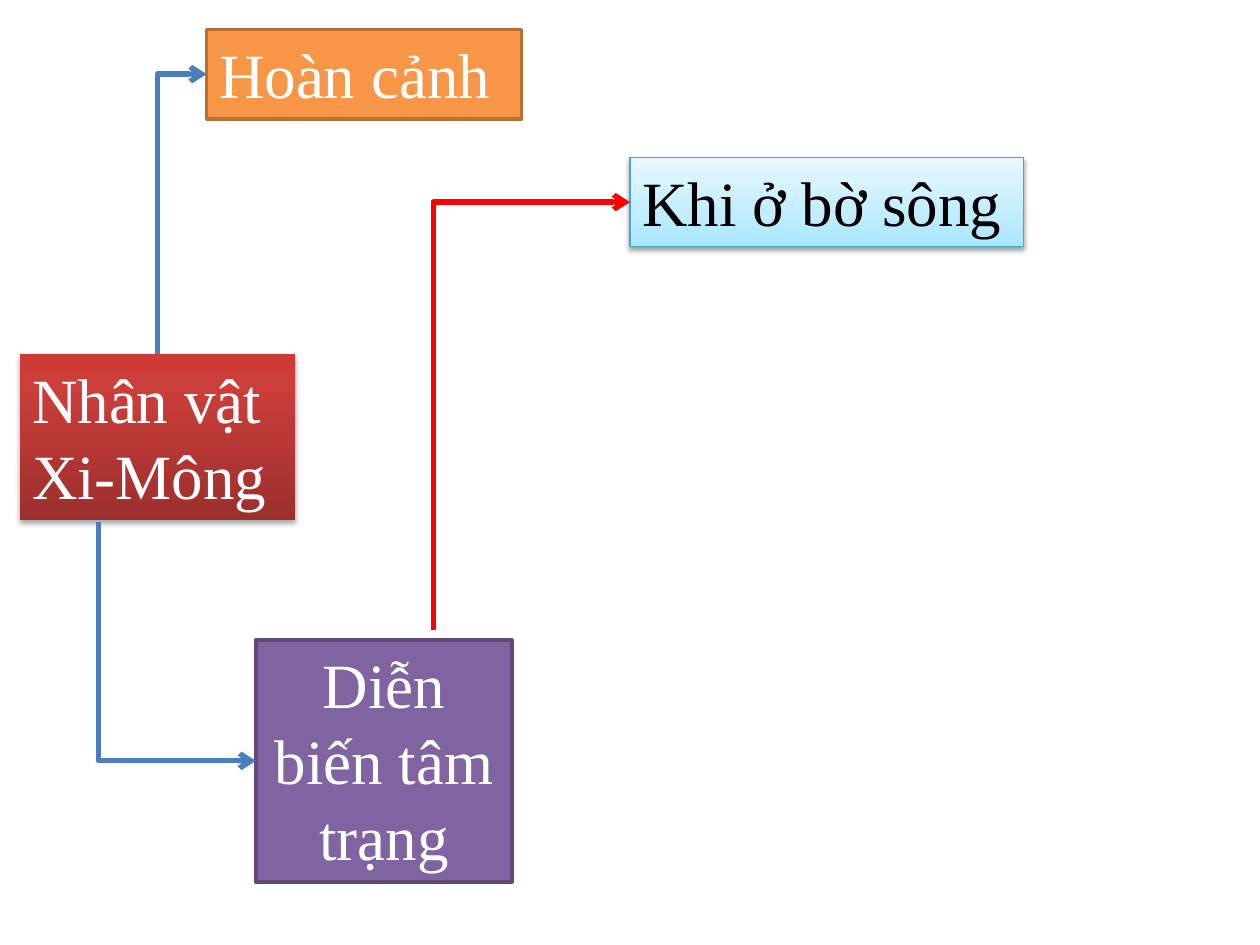
"""Builds a mind map of the character Xi-Mông from four boxes and three elbow arrows."""
from lxml import etree
from pptx import Presentation
from pptx import util as u
from pptx.dml.color import RGBColor
from pptx.enum import shapes, text
from pptx.oxml import parse_xml
from pptx.oxml.ns import nsdecls, qn

COLORS = {
    "white": "FFFFFF", "black": "000000", "orange": "F79646", "brown": "B76F34",
    "purple": "8064A2", "plum": "5F4A78", "teal": "46AAC5", "blue": "4B7EBC", "red": "FF0000",
    "crimson fade": [(0, "9C2F2D"), (80, "CB3E3A"), (100, "CE3B37")],
    "sky fade": [(0, "A7E6FF"), (35, "C1EDFF"), (100, "E7F8FF")],
}

presentation = Presentation()
presentation.slide_width, presentation.slide_height = u.Inches(10), u.Inches(7.5)
CELL = presentation.slide_width / 64
slide = presentation.slides.add_slide(presentation.slide_layouts[6])


def cells(*counts):
    return [u.Emu(round(count * CELL)) for count in counts]


def add_gradient(shape, stops):
    stop_xml = "".join(
        f'<a:gs pos="{place * 1000}"><a:srgbClr val="{color}"/></a:gs>' for place, color in stops)
    gradient = parse_xml(
        f'<a:gradFill {nsdecls("a")} rotWithShape="1"><a:gsLst>{stop_xml}</a:gsLst>'
        '<a:lin ang="16200000" scaled="0"/></a:gradFill>')
    shape._element.spPr.find(qn("a:prstGeom")).addnext(gradient)


left, center = text.PP_ALIGN.LEFT, text.PP_ALIGN.CENTER
boxes = [
    (["Nhân vật", "Xi-Mông"], (1, 18, 14, 8.4), "crimson fade", None, 0, "white", left, (35, 1.8)),
    (["Hoàn cảnh"], (10.5, 1.5, 16, 4.54), "orange", "brown", 2, "white", left, None),
    (["Diễn biến tâm trạng"], (13, 32.5, 13, 12.3), "purple", "plum", 2, "white", center, None),
    (["Khi ở bờ sông"], (32, 8, 20, 4.54), "sky fade", "teal", 0.75, "black", left, (38, 1.6)),
]
for lines, place, fill, outline, weight, ink, alignment, shadow in boxes:
    shape = slide.shapes.add_shape(shapes.MSO_SHAPE.RECTANGLE, *cells(*place))
    shape.shadow.inherit = False
    if isinstance(COLORS[fill], list):
        add_gradient(shape, COLORS[fill])
    else:
        shape.fill.solid()
        shape.fill.fore_color.rgb = RGBColor.from_string(COLORS[fill])
    if outline:
        shape.line.color.rgb = RGBColor.from_string(COLORS[outline])
        shape.line.width = u.Pt(weight)
    else:
        shape.line.fill.background()
    if shadow:
        opacity, distance = shadow
        shape._element.spPr.find(qn("a:effectLst")).append(parse_xml(
            f'<a:outerShdw {nsdecls("a")} blurRad="{u.Pt(3.1)}" dist="{u.Pt(distance)}" '
            f'dir="5400000" rotWithShape="0"><a:srgbClr val="{COLORS["black"]}">'
            f'<a:alpha val="{opacity * 1000}"/></a:srgbClr></a:outerShdw>'))
    frame = shape.text_frame
    frame.word_wrap = True
    frame.auto_size = text.MSO_AUTO_SIZE.SHAPE_TO_FIT_TEXT
    frame.vertical_anchor = text.MSO_ANCHOR.TOP
    frame.text = "\n".join(lines)
    for paragraph in frame.paragraphs:
        paragraph.alignment = alignment
        paragraph.font.name = "Times New Roman"
        paragraph.font.size = u.Pt(36)
        paragraph.font.color.rgb = RGBColor.from_string(COLORS[ink])

arrows = [
    ((8, 18), (10.5, 3.77), "blue"),
    ((5, 26.5), (13, 38.65), "blue"),
    ((22, 32), (32, 10.27), "red"),
]
for (start_x, start_y), (end_x, end_y), color in arrows:
    length, reach = abs(end_y - start_y), end_x - start_x
    middle_x, middle_y = (start_x + end_x) / 2, (start_y + end_y) / 2
    connector = slide.shapes.add_connector(
        shapes.MSO_CONNECTOR.ELBOW,
        *cells(middle_x - length / 2, middle_y - reach / 2,
               middle_x + length / 2, middle_y + reach / 2))
    connector.line.color.rgb = RGBColor.from_string(COLORS[color])
    connector.line.width = u.Pt(3)
    properties = connector._element.spPr
    properties.find(qn("a:prstGeom")).set("prst", "bentConnector2")
    turn = properties.find(qn("a:xfrm"))
    turn.set("flipH", "1")
    if end_y < start_y:
        turn.set("rot", "5400000")
        turn.set("flipV", "1")
    else:
        turn.set("rot", "16200000")
    etree.SubElement(properties.find(qn("a:ln")), qn("a:tailEnd"), type="arrow")
    etree.SubElement(properties, qn("a:effectLst"))

presentation.save("out.pptx")
